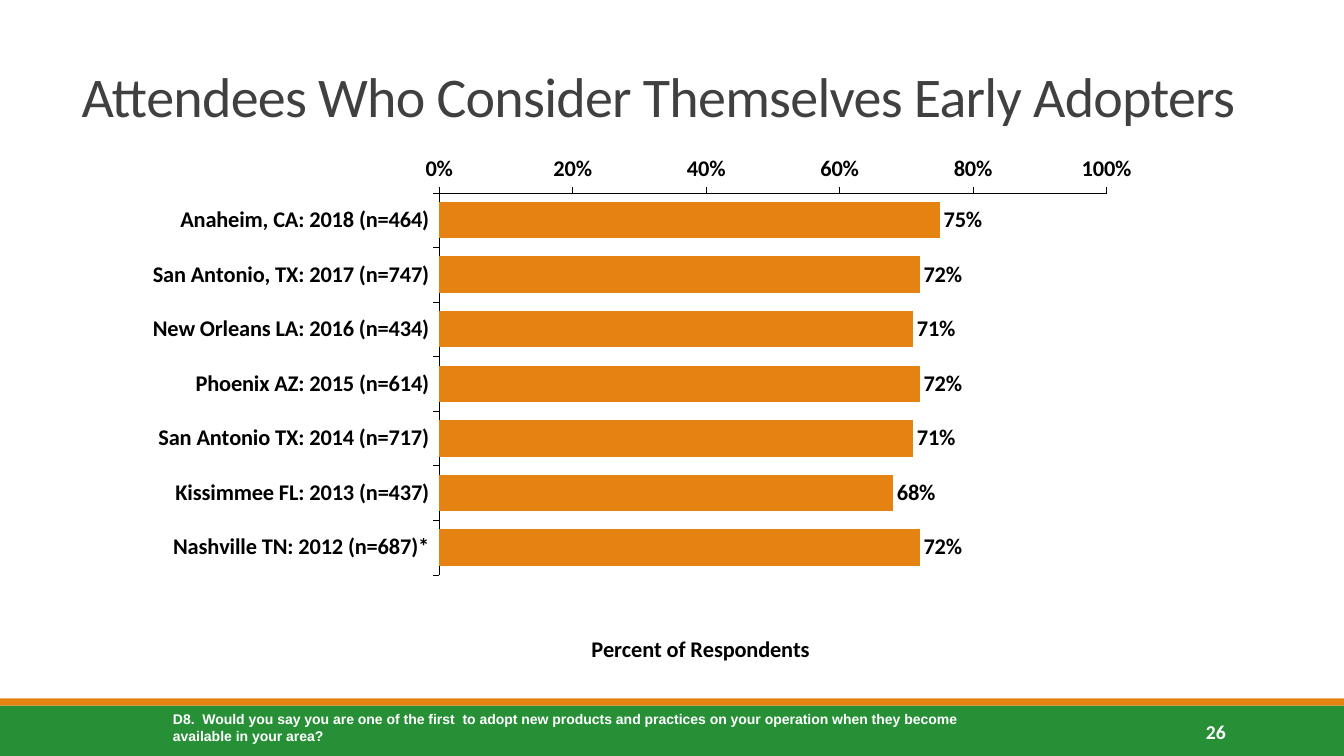
from dataclasses import dataclass

from lxml import etree
from pptx import Presentation
from pptx.chart import data as chart_data
from pptx.dml.color import RGBColor
from pptx.enum import chart as ch, shapes, text
from pptx.oxml import ns
from pptx.util import Cm, Pt


@dataclass(frozen=True)
class Theme:
    green: RGBColor = RGBColor(0x27, 0x90, 0x37)
    orange: RGBColor = RGBColor(0xE4, 0x83, 0x12)
    grey: RGBColor = RGBColor(0x40, 0x40, 0x40)
    white: RGBColor = RGBColor(0xFF, 0xFF, 0xFF)
    black: RGBColor = RGBColor(0, 0, 0)
    main_font: str = "Calibri"
    note_font: str = "Arial"
    title_size: Pt = Pt(40)
    chart_size: Pt = Pt(16)
    number_size: Pt = Pt(14)
    note_size: Pt = Pt(10)
    axis_width: Pt = Pt(0.25)


THEME = Theme()

RESPONSES = {
    "Anaheim, CA: 2018 (n=464)": 0.75,
    "San Antonio, TX: 2017 (n=747)": 0.72,
    "New Orleans LA: 2016 (n=434)": 0.71,
    "Phoenix AZ: 2015 (n=614)": 0.72,
    "San Antonio TX: 2014 (n=717)": 0.71,
    "Kissimmee FL: 2013 (n=437)": 0.68,
    "Nashville TN: 2012 (n=687)*": 0.72,
}


def apply(target, **values):
    for name, value in values.items():
        setattr(target, name, value)


def style_font(font, color, **values):
    apply(font, **values)
    font.color.rgb = color


def box(left, top, width, height):
    return [Cm(length) for length in (left, top, width, height)]


def add_band(slide, top, height, color):
    band = slide.shapes.add_shape(shapes.MSO_SHAPE.RECTANGLE, *box(0, top, 33.87, height))
    band.shadow.inherit = False
    band.fill.solid()
    band.fill.fore_color.rgb = color
    band.line.fill.background()


def set_title(slide, wording):
    heading = slide.shapes.title
    left, top, width, height = box(1.8, 0.79, 30.58, 2.59)
    apply(heading, left=left, top=top, width=width, height=height)
    frame = heading.text_frame
    frame.text = wording
    apply(frame, word_wrap=True, auto_size=text.MSO_AUTO_SIZE.NONE,
          vertical_anchor=text.MSO_ANCHOR.BOTTOM)
    line = frame.paragraphs[0]
    apply(line, alignment=text.PP_ALIGN.LEFT, line_spacing=0.85)
    run = line.runs[0]
    style_font(run.font, THEME.grey, name=THEME.main_font, size=THEME.title_size, bold=False)
    run.font._element.set("spc", "-50")


def add_label(slide, wording, place, anchor, alignment, **font_values):
    frame = slide.shapes.add_textbox(*place).text_frame
    frame.text = wording
    apply(frame, word_wrap=True, vertical_anchor=anchor)
    line = frame.paragraphs[0]
    line.alignment = alignment
    style_font(line.runs[0].font, THEME.white, bold=True, **font_values)


def place_by_hand(parent, index, **values):
    for previous in parent.findall(ns.qn("c:layout")):
        parent.remove(previous)
    layout = etree.Element(ns.qn("c:layout"))
    manual = etree.SubElement(layout, ns.qn("c:manualLayout"))
    for tag, value in values.items():
        etree.SubElement(manual, ns.qn(f"c:{tag}")).set("val", str(value))
    parent.insert(index, layout)


def style_axis(axis):
    apply(axis, has_major_gridlines=False, major_tick_mark=ch.XL_TICK_MARK.OUTSIDE,
          minor_tick_mark=ch.XL_TICK_MARK.NONE)
    axis.format.line.color.rgb = THEME.black
    axis.format.line.width = THEME.axis_width


def add_adopter_chart(slide):
    responses = chart_data.CategoryChartData(number_format="0%")
    responses.categories = list(RESPONSES)
    responses.add_series("Series 1", list(RESPONSES.values()))
    chart = slide.shapes.add_chart(ch.XL_CHART_TYPE.BAR_CLUSTERED,
                                   *box(3.18, 3.71, 30.58, 13.21), responses).chart
    apply(chart, has_legend=False, has_title=False)
    chart_font = dict(name=THEME.main_font, size=THEME.chart_size, bold=True)
    style_font(chart.font, THEME.black, **chart_font)

    cities, percent = chart.category_axis, chart.value_axis
    for axis in (cities, percent):
        style_axis(axis)
    apply(cities, reverse_order=True, crosses=ch.XL_AXIS_CROSSES.MAXIMUM)
    apply(percent, minimum_scale=0, maximum_scale=1, major_unit=0.2)
    apply(percent.tick_labels, number_format="0%", number_format_is_linked=False)
    percent_title = percent.axis_title
    percent_title.text_frame.text = "Percent of Respondents"
    style_font(percent_title.text_frame.paragraphs[0].runs[0].font, THEME.black, **chart_font)
    place_by_hand(percent_title._element, 1, xMode="edge", yMode="edge", x=0.38, y=0.92)

    bars = chart.plots[0]
    apply(bars, gap_width=50, vary_by_categories=False, has_data_labels=True)
    apply(bars.data_labels, show_value=True, number_format="0%",
          number_format_is_linked=False, position=ch.XL_LABEL_POSITION.OUTSIDE_END)
    style_font(bars.data_labels.font, THEME.black, **chart_font)
    bar_fill = bars.series[0].format.fill
    bar_fill.solid()
    bar_fill.fore_color.rgb = THEME.orange
    plot_area = chart._chartSpace.chart.plotArea
    place_by_hand(plot_area, 0, layoutTarget="inner", xMode="edge", yMode="edge",
                  x=0.258, y=0.087, w=0.55, h=0.729)


def main():
    deck = Presentation()
    apply(deck, slide_width=Cm(33.87), slide_height=Cm(19.05))
    slide = deck.slides.add_slide(deck.slide_layouts[5])
    add_band(slide, 17.78, 1.27, THEME.green)
    add_band(slide, 17.6, 0.18, THEME.orange)
    set_title(slide, "Attendees Who Consider Themselves Early Adopters")
    add_label(slide, "26", box(27.51, 17.93, 3.63, 1.02), text.MSO_ANCHOR.MIDDLE,
              text.PP_ALIGN.RIGHT, name=THEME.main_font, size=THEME.number_size)
    add_adopter_chart(slide)
    add_label(slide,
              "D8.  Would you say you are one of the first  to adopt new products and practices "
              "on your operation when they become available in your area?",
              box(4.11, 17.78, 20.32, 1.12), text.MSO_ANCHOR.TOP, text.PP_ALIGN.LEFT,
              name=THEME.note_font, size=THEME.note_size)
    deck.save("out.pptx")


if __name__ == "__main__":
    main()
